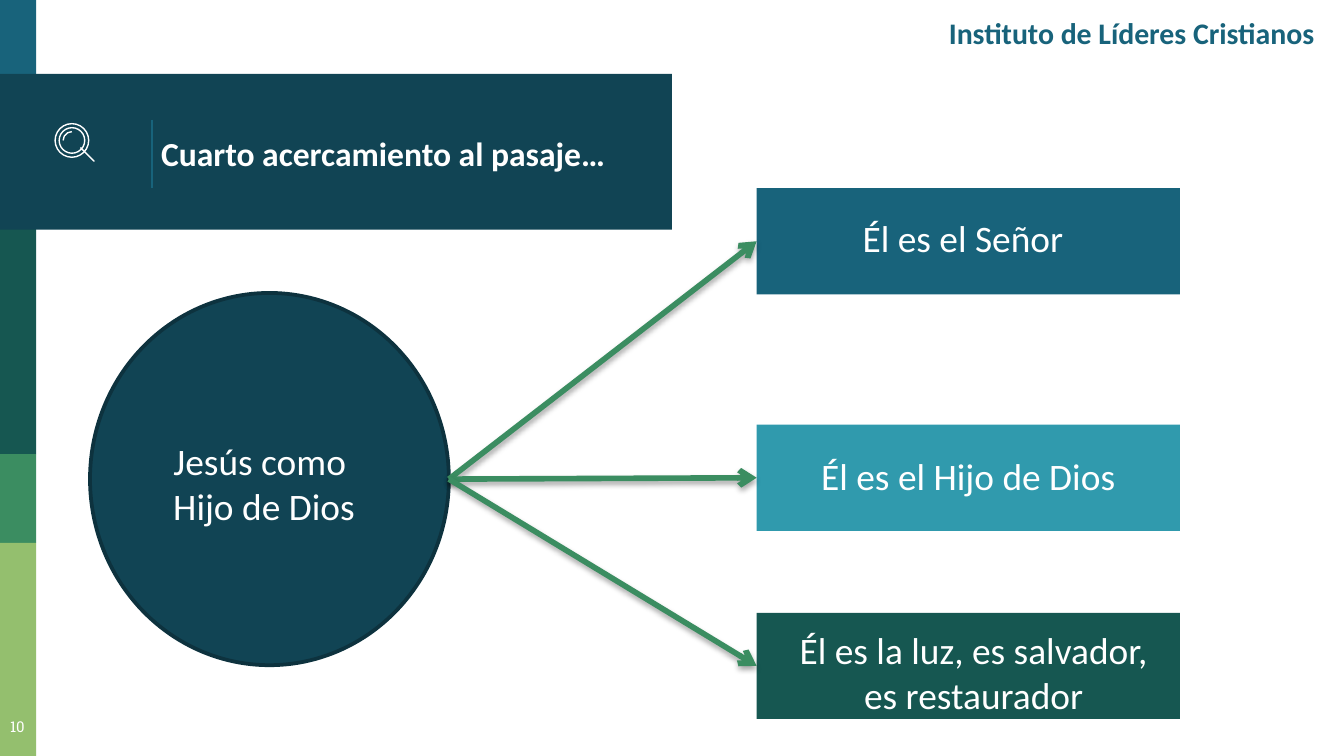
from dataclasses import dataclass
from typing import NamedTuple

from lxml.etree import SubElement
from pptx import Presentation
from pptx.dml.color import RGBColor
from pptx.enum.shapes import MSO_CONNECTOR, MSO_SHAPE
from pptx.enum.text import MSO_ANCHOR, PP_ALIGN
from pptx.oxml.ns import qn
from pptx.util import Inches, Pt


@dataclass(frozen=True)
class Theme:
    """Colours, fonts and type sizes of the deck."""
    navy: str = "114454"
    edge: str = "0D323E"
    blue: str = "18637B"
    teal: str = "309AAD"
    pine: str = "165751"
    green: str = "3B8D61"
    lime: str = "94BF6E"
    white: str = "FFFFFF"
    shade: str = "000000"
    font: str = "Calibri"
    serif: str = "Roboto Slab"
    body: int = 20
    title: int = 18
    head: int = 16
    small: int = 8


class Box(NamedTuple):
    """A region on a grid of 100 columns, each cell a tenth of an inch."""
    x: float
    y: float
    w: float
    h: float

    def cell(self, x, y, w, h):
        """Return a box placed relative to this one."""
        return Box(self.x + x, self.y + y, w, h)

    def size(self):
        """Return left, top, width and height as lengths."""
        return [Inches(v / 10) for v in self]


THEME = Theme()
COLS, ROWS = 100, 56.25


def tint(code):
    """Turn a hex code into a colour."""
    return RGBColor.from_string(code)


def draw(shapes, kind, box, fill=None, line=None, width=0.75):
    """Add a flat preset shape."""
    shape = shapes.add_shape(kind, *box.size())
    paint(shape, fill, line, width)
    return shape


def paint(shape, fill, line, width):
    """Set the fill and outline of a shape."""
    shape.shadow.inherit = False
    for coat, code in ((shape.fill, fill), (shape.line.fill, line)):
        if code:
            coat.solid()
            coat.fore_color.rgb = tint(code)
        else:
            coat.background()
    if line:
        shape.line.width = Pt(width)


def write(shapes, box, text, size, color=THEME.white, font=THEME.font,
          bold=False, align=PP_ALIGN.CENTER, anchor=MSO_ANCHOR.TOP, inset=0.05):
    """Add a wrapped text box."""
    frame = shapes.add_textbox(*box.size()).text_frame
    frame.word_wrap = True
    frame.vertical_anchor = anchor
    frame.margin_top = frame.margin_bottom = Inches(inset)
    frame.text = text
    para = frame.paragraphs[0]
    para.alignment = align
    for run in para.runs:
        run.font.name, run.font.size, run.font.bold = font, Pt(size), bold
        run.font.color.rgb = tint(color)


def link(shapes, start, end, color, width, arrow=False):
    """Join two grid points, with a shaded arrow if asked."""
    ends = [Inches(v / 10) for v in (*start, *end)]
    line = shapes.add_connector(MSO_CONNECTOR.STRAIGHT, *ends)
    line.line.color.rgb = tint(color)
    line.line.width = Pt(width)
    props = line._element.spPr
    effect = SubElement(props, qn("a:effectLst"))
    if arrow:
        SubElement(props.find(qn("a:ln")), qn("a:tailEnd"), type="arrow")
        shade = SubElement(effect, qn("a:outerShdw"), blurRad="40000",
                           dist="23000", dir="5400000", rotWithShape="0")
        ink = SubElement(shade, qn("a:srgbClr"), val=THEME.shade)
        SubElement(ink, qn("a:alpha"), val="35000")


def sidebar(shapes, box):
    """Draw the colour bands and the page number."""
    bands = ((0, 5.8, THEME.blue), (17, 16.8, THEME.pine),
             (33.8, 6.6, THEME.green), (40.4, 15.85, THEME.lime))
    for top, tall, color in bands:
        draw(shapes, MSO_SHAPE.RECTANGLE, box.cell(0, top, box.w, tall), color)
    write(shapes, box.cell(-0.6, 52.7, 3.8, 3.5), "10", THEME.small,
          font=THEME.serif, inset=0.1)


def lens(shapes, box):
    """Draw the magnifier icon as one group."""
    group = shapes.add_group_shape().shapes
    for gap in (0, 0.3):
        ring = box.cell(gap, gap, 2.5 - 2 * gap, 2.5 - 2 * gap)
        draw(group, MSO_SHAPE.OVAL, ring, line=THEME.white)
    glint = draw(group, MSO_SHAPE.ARC, box.cell(0.6, 0.6, 1.3, 1.3),
                 line=THEME.white)
    glint.adjustments[0], glint.adjustments[1] = 108, 162
    grip = ((2, 2.2), (3, 3.2), (3.1, 3.2), (3.2, 3.1), (3.2, 3), (2.2, 2))
    dots = [(box.x + x, box.y + y) for x, y in grip]
    pen = group.build_freeform(*dots[0], scale=Inches(0.1))
    pen.add_line_segments(dots[1:], close=False)
    paint(pen.convert_to_shape(), None, THEME.white, 0.75)


def banner(shapes, box):
    """Draw the title panel with its icon and rule."""
    draw(shapes, MSO_SHAPE.RECTANGLE, box, THEME.navy)
    rule = box.x + 11.3
    link(shapes, (rule, box.y + 3.4), (rule, box.y + 8.5), THEME.blue, 0.75)
    lens(shapes, box.cell(4.1, 3.7, 3.3, 3.3))
    write(shapes, box.cell(11, 0.3, 42.2, 11.2),
          "Cuarto acercamiento al pasaje…", THEME.title, bold=True,
          align=PP_ALIGN.LEFT, anchor=MSO_ANCHOR.MIDDLE, inset=0.1)


def header(shapes, box):
    """Write the name of the institute."""
    write(shapes, box, "Instituto de Líderes Cristianos", THEME.head,
          THEME.blue, bold=True, align=PP_ALIGN.RIGHT, anchor=MSO_ANCHOR.MIDDLE)


def diagram(shapes, box):
    """Draw the circle and the three ideas it points to."""
    ideas = ((0, 1.5, 4.4, THEME.blue, "Él es el Señor"),
             (17.6, 1.6, 4.4, THEME.teal, "Él es el Hijo de Dios"),
             (31.6, 0.6, 7.7, THEME.pine,
              "Él es la luz, es salvador, es restaurador"))
    disc = box.cell(0, 7.8, 26.7, 27.7)
    draw(shapes, MSO_SHAPE.OVAL, disc, THEME.navy, THEME.edge, 2)
    hub = disc.x + disc.w, disc.y + disc.h / 2
    for step, (top, drop, tall, color, text) in enumerate(ideas):
        card = box.cell(box.w - 31.5, top, 31.5, 7.9)
        draw(shapes, MSO_SHAPE.RECTANGLE, card, color)
        link(shapes, hub, (card.x, card.y + card.h / 2), THEME.green, 3, True)
        write(shapes, card.cell(0.8 + 0.4 * step, drop, 29.1, tall), text,
              THEME.body)
    write(shapes, disc.cell(-1.6, 10.3, 29.1, 7.7),
          "Jesús como \vHijo de Dios", THEME.body)


def main():
    """Build and save the slide."""
    deck = Presentation()
    deck.slide_width, deck.slide_height = Inches(COLS / 10), Inches(ROWS / 10)
    shapes = deck.slides.add_slide(deck.slide_layouts[6]).shapes
    sidebar(shapes, Box(0, 0, 2.7, ROWS))
    banner(shapes, Box(0, 5.5, 50, 11.6))
    header(shapes, Box(61.8, 0.6, 37, 3.7))
    diagram(shapes, Box(6.7, 14, 81.1, 39.5))
    deck.save("out.pptx")


if __name__ == "__main__":
    main()
